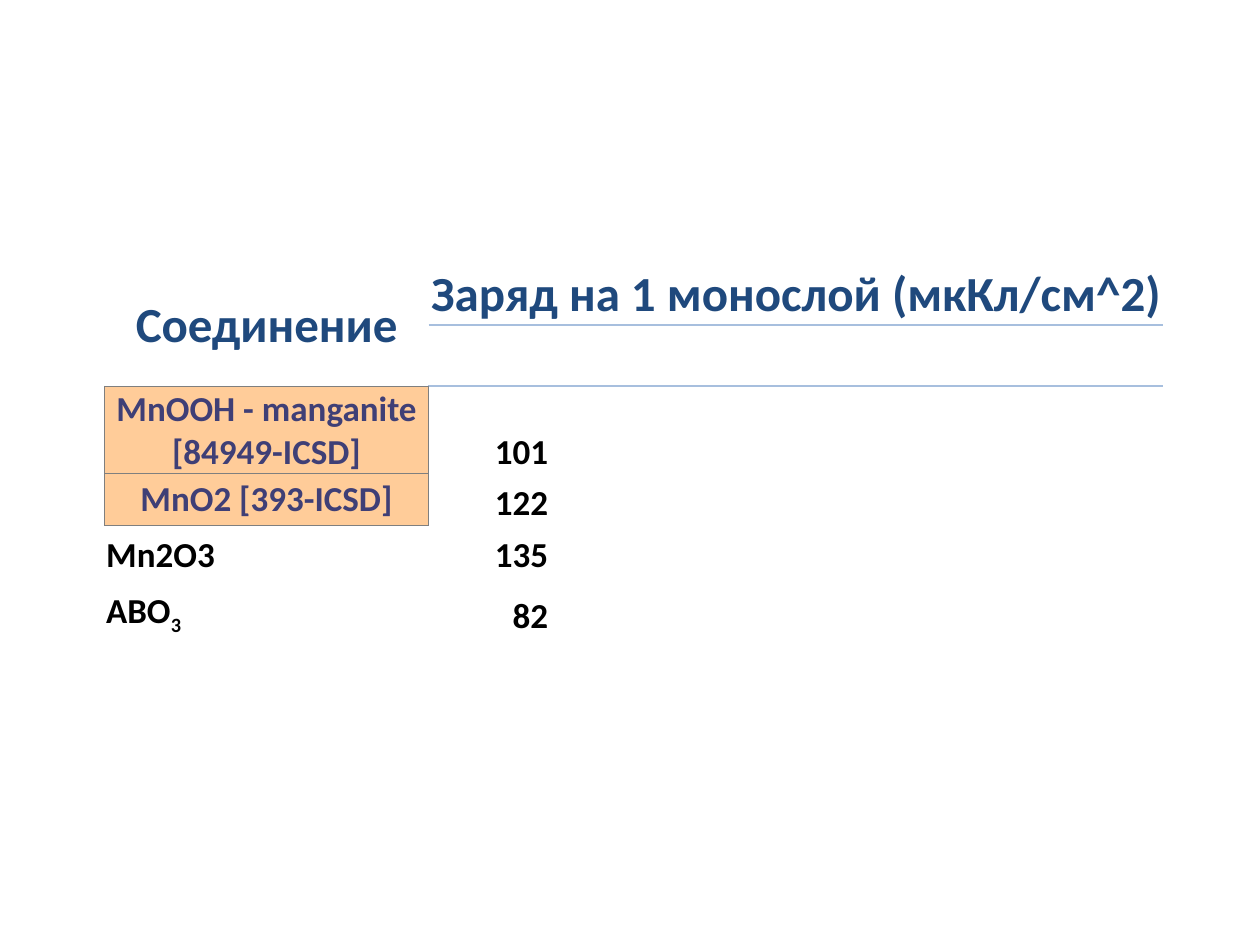
from dataclasses import dataclass

from lxml import etree
from pptx import Presentation
from pptx.dml.color import RGBColor
from pptx.enum.text import MSO_ANCHOR, PP_ALIGN
from pptx.oxml.ns import qn
from pptx.table import Table, _Cell
from pptx.util import Cm, Pt

LEFT, CENTER, RIGHT = PP_ALIGN.LEFT, PP_ALIGN.CENTER, PP_ALIGN.RIGHT
MIDDLE, BOTTOM = MSO_ANCHOR.MIDDLE, MSO_ANCHOR.BOTTOM

NAVY = RGBColor(0x1F, 0x49, 0x7D)
INDIGO = RGBColor(0x3F, 0x3F, 0x76)
BLACK = RGBColor(0x00, 0x00, 0x00)
PEACH = RGBColor(0xFF, 0xCC, 0x99)
GRAY = RGBColor(0x7F, 0x7F, 0x7F)
LIGHT_BLUE = RGBColor(0xA7, 0xBF, 0xDE)

FONT = "Calibri"
PLAIN_TABLE_STYLE = "{2D5ABB26-0587-4C30-8999-92F81FD0307C}"
COLUMN_WIDTHS = [Cm(6.53), Cm(2.44)] + [Cm(2.06)] * 6
ROW_HEIGHTS = [Cm(1.22), Cm(1.22), Cm(1.74), Cm(1.04), Cm(1.04), Cm(1.24)]
FIRST_COMPOUND_ROW = 2


@dataclass(frozen=True)
class Compound:
    name: str
    charge: str
    subscript: str = ""
    highlighted: bool = False


COMPOUNDS = [
    Compound("MnOOH - manganite [84949-ICSD]", "101", highlighted=True),
    Compound("MnO2 [393-ICSD]", "122", highlighted=True),
    Compound("Mn2O3", "135"),
    Compound("ABO", "82", subscript="3"),
]


def set_borders(cell: _Cell, sides: str, color: RGBColor, width: float) -> None:
    """Draw the given sides, listed in schema order: L, R, T, B."""
    properties = cell._tc.get_or_add_tcPr()
    for side in sides:
        line = etree.SubElement(properties, qn(f"a:ln{side}"), w=str(Pt(width)))
        fill = etree.SubElement(line, qn("a:solidFill"))
        etree.SubElement(fill, qn("a:srgbClr"), val=str(color))


def write_cell(cell: _Cell, text: str, size: int, color: RGBColor,
               align: PP_ALIGN, anchor: MSO_ANCHOR, subscript: str = "") -> None:
    cell.vertical_anchor = anchor
    para = cell.text_frame.paragraphs[0]
    para.alignment = align
    for part in filter(None, (text, subscript)):
        span = para.add_run()
        span.text = part
        span.font.name = FONT
        span.font.size = Pt(size)
        span.font.bold = True
        span.font.color.rgb = color
    if subscript:
        span._r.get_or_add_rPr().set("baseline", "-25000")


def format_grid(table: Table) -> None:
    table.first_row = table.horz_banding = False
    table._tbl.tblPr.find(qn("a:tableStyleId")).text = PLAIN_TABLE_STYLE
    for column, width in zip(table.columns, COLUMN_WIDTHS):
        column.width = width
    for row, height in zip(table.rows, ROW_HEIGHTS):
        row.height = height
    for cell in table.iter_cells():
        cell.margin_left = cell.margin_right = cell.margin_top = Cm(0.03)
        cell.margin_bottom = 0


def write_header(table: Table) -> None:
    for column in range(1, len(COLUMN_WIDTHS)):
        set_borders(table.cell(0, column), "B", LIGHT_BLUE, 1.5)
        set_borders(table.cell(1, column), "T", LIGHT_BLUE, 1.5)
    table.cell(0, 0).merge(table.cell(1, 0))
    table.cell(0, 1).merge(table.cell(0, len(COLUMN_WIDTHS) - 1))
    for column, title in enumerate(["Соединение", "Заряд на 1 монослой (мкКл/см^2)"]):
        write_cell(table.cell(0, column), title, 28, NAVY, CENTER, MIDDLE)


def write_compound(table: Table, row: int, compound: Compound) -> None:
    name_cell, charge_cell = table.cell(row, 0), table.cell(row, 1)
    if compound.highlighted:
        set_borders(name_cell, "LRTB", GRAY, 0.5)
        name_cell.fill.solid()
        name_cell.fill.fore_color.rgb = PEACH
        color, align, anchor = INDIGO, CENTER, MIDDLE
    else:
        color, align, anchor = BLACK, LEFT, BOTTOM
    write_cell(name_cell, compound.name, 20, color, align, anchor, compound.subscript)
    write_cell(charge_cell, compound.charge, 20, BLACK, RIGHT, BOTTOM)


def main() -> None:
    deck = Presentation()
    deck.slide_width, deck.slide_height = Cm(25.4), Cm(19.05)
    page = deck.slides.add_slide(deck.slide_layouts[6])
    table = page.shapes.add_table(
        len(ROW_HEIGHTS), len(COLUMN_WIDTHS),
        Cm(2.11), Cm(5.31), sum(COLUMN_WIDTHS), sum(ROW_HEIGHTS),
    ).table
    format_grid(table)
    write_header(table)
    for row, compound in enumerate(COMPOUNDS, FIRST_COMPOUND_ROW):
        write_compound(table, row, compound)
    deck.save("out.pptx")


if __name__ == "__main__":
    main()
